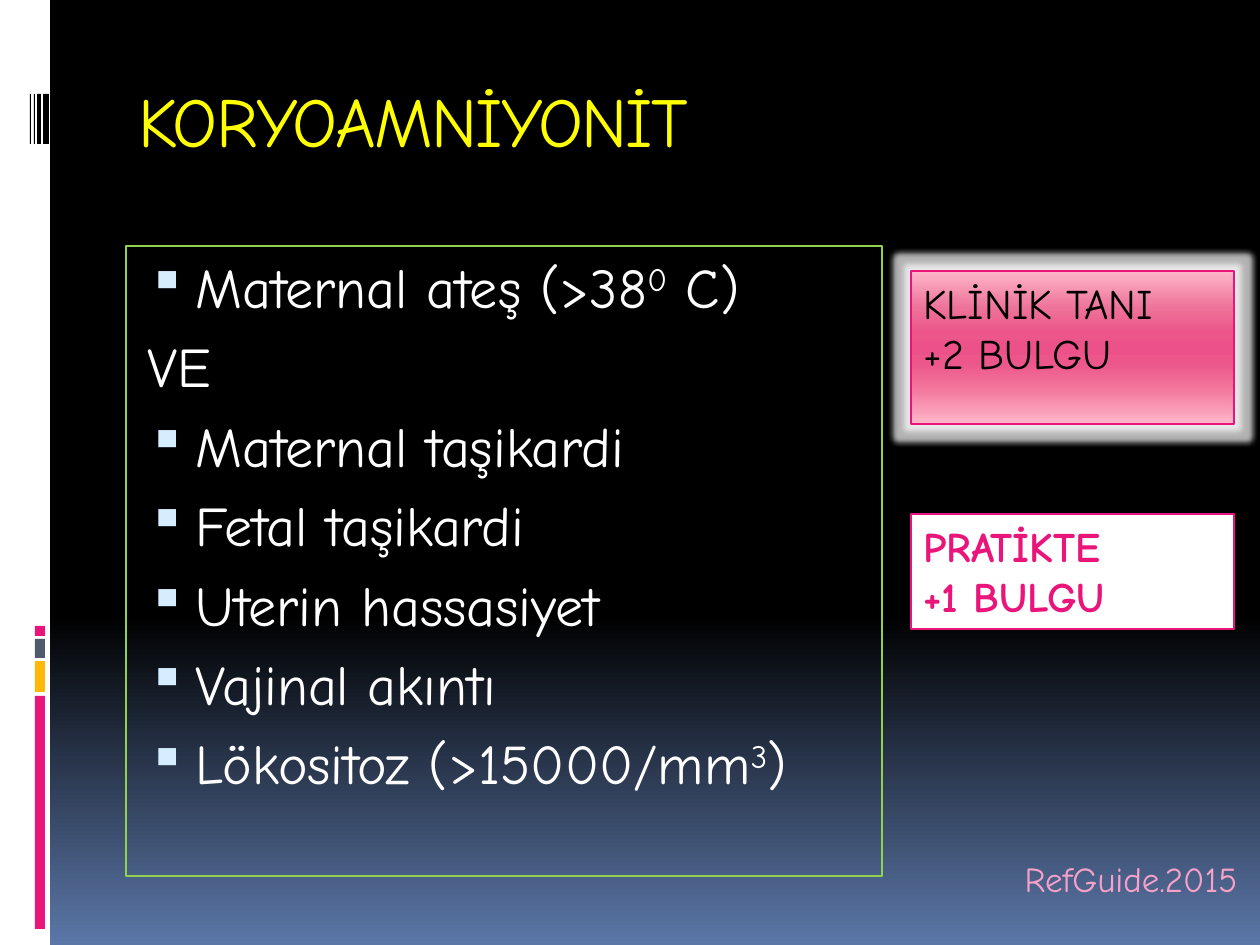
"""Builds the slide of diagnostic criteria for chorioamnionitis."""
from lxml import etree
from pptx import Presentation
from pptx import util as u
from pptx.dml.color import RGBColor
from pptx.enum import shapes, text
from pptx.oxml.ns import qn

THEME = {
    "font": "Comic Neue",
    "white": "FFFFFF", "black": "000000", "pink": "EA157A", "amber": "FEB80A",
    "slate": "4E5B6F", "yellow": "FFFF00", "green": "92D050", "bullet": "D6ECFF",
    "rose": "F7A1CA",
    "title": 40, "body": 32, "callout": 24, "source": 20,
    "backdrop": [(0, "000000"), (65, "000000"), (100, "5B77A8")],
    "glossy": [(0, "FFB6C9"), (25, "ED7198"), (40, "EC568B"), (50, "EC5289"),
               (60, "EC568B"), (75, "F2729A"), (100, "FFB6C9")],
}
SCALE = 914400 / 126


def set_gradient(fill, owner, stops):
    fill.gradient()
    fill.gradient_angle = 270
    stop_list = next(owner.iter(qn("a:gsLst")))
    for old in list(stop_list):
        stop_list.remove(old)
    for position, color in stops:
        stop = etree.SubElement(stop_list, qn("a:gs"), pos=str(position * 1000))
        etree.SubElement(stop, qn("a:srgbClr"), val=color)


def add_span(para, words, size, color, bold=False):
    span = para.add_run()
    span.text = words
    span.font.name = THEME["font"]
    span.font.size = u.Pt(size)
    span.font.bold = bold
    span.font.color.rgb = RGBColor.from_string(THEME[color])
    return span


deck = Presentation()
deck.slide_width, deck.slide_height = u.Inches(10), u.Inches(7.5)
page = deck.slides.add_slide(deck.slide_layouts[6])
set_gradient(page.background.fill, page.element, THEME["backdrop"])

side_bars = [(0, 0, 50, 945, "white"), (35, 696, 10, 233, "pink"),
             (35, 661, 10, 31, "amber"), (35, 639, 10, 19, "slate"),
             (35, 626, 10, 10, "pink")]
stripes = [(left, 94, width, 50, "black")
           for left, width in [(43, 6), (37, 4), (34, 1), (30, 1)]]
for *place, color in side_bars + stripes:
    bar = page.shapes.add_shape(shapes.MSO_SHAPE.RECTANGLE,
                                *(round(n * SCALE) for n in place))
    bar.shadow.inherit = False
    bar.fill.solid()
    bar.fill.fore_color.rgb = RGBColor.from_string(THEME[color])
    bar.line.fill.background()

title = page.shapes.add_textbox(*(round(n * SCALE) for n in (126, 71, 1071, 126)))
title.text_frame.word_wrap = True
span = add_span(title.text_frame.paragraphs[0], "KORYOAMNİYONİT", THEME["title"], "yellow")
span.font._element.set("spc", "-100")

criteria = page.shapes.add_textbox(*(round(n * SCALE) for n in (126, 246, 756, 630)))
criteria.line.color.rgb = RGBColor.from_string(THEME["green"])
criteria.line.width = u.Pt(0.75)
criteria.text_frame.word_wrap = True
findings = [(True, ["Maternal ateş (>38", "0", " C)"]), (False, ["VE"]),
            (True, ["Maternal taşikardi"]), (True, ["Fetal taşikardi"]),
            (True, ["Uterin hassasiyet"]), (True, ["Vajinal akıntı"]),
            (True, ["Lökositoz (>15000/mm", "3", ")"])]
for row, (bulleted, pieces) in enumerate(findings):
    frame = criteria.text_frame
    para = frame.add_paragraph() if row else frame.paragraphs[0]
    para.space_before = u.Pt(7)
    props = para._p.get_or_add_pPr()
    props.set("marL", str(round(57 * SCALE)))
    props.set("indent", str(round(-48 * SCALE)))
    if bulleted:
        tint = etree.SubElement(props, qn("a:buClr"))
        etree.SubElement(tint, qn("a:srgbClr"), val=THEME["bullet"])
        etree.SubElement(props, qn("a:buSzPct"), val="95000")
        etree.SubElement(props, qn("a:buChar"), char="▪")
    else:
        etree.SubElement(props, qn("a:buNone"))
    for index, piece in enumerate(pieces):
        span = add_span(para, piece, THEME["body"], "white")
        if index == 1:
            span.font._element.set("baseline", "30000")

callouts = [(271, 153, 0.94, "black", False, ["KLİNİK TANI", "+2 BULGU"]),
            (514, 115, 1.5, "pink", True, ["PRATİKTE", "+1 BULGU"])]
for top, height, weight, color, bold, lines in callouts:
    box = page.shapes.add_shape(shapes.MSO_SHAPE.RECTANGLE,
                                *(round(n * SCALE) for n in (911, top, 323, height)))
    box.shadow.inherit = False
    box.line.color.rgb = RGBColor.from_string(THEME["pink"])
    box.line.width = u.Pt(weight)
    if bold:
        box.fill.solid()
        box.fill.fore_color.rgb = RGBColor.from_string(THEME["white"])
    else:
        set_gradient(box.fill, box.element, THEME["glossy"])
        effects = next(box.element.iter(qn("a:effectLst")))
        glow = etree.SubElement(effects, qn("a:glow"), rad=str(round(12 * SCALE)))
        halo = etree.SubElement(glow, qn("a:srgbClr"), val=THEME["white"])
        etree.SubElement(halo, qn("a:alpha"), val="70000")
    frame = box.text_frame
    frame.word_wrap = True
    frame.vertical_anchor = text.MSO_ANCHOR.TOP
    for row, line in enumerate(lines):
        para = frame.add_paragraph() if row else frame.paragraphs[0]
        para.alignment = text.PP_ALIGN.LEFT
        add_span(para, line, THEME["callout"], color, bold)

source = page.shapes.add_textbox(*(round(n * SCALE) for n in (968, 851, 282, 55)))
source.text_frame.word_wrap = False
para = source.text_frame.paragraphs[0]
para.alignment = text.PP_ALIGN.RIGHT
add_span(para, "RefGuide.2015", THEME["source"], "rose")

deck.save("out.pptx")
